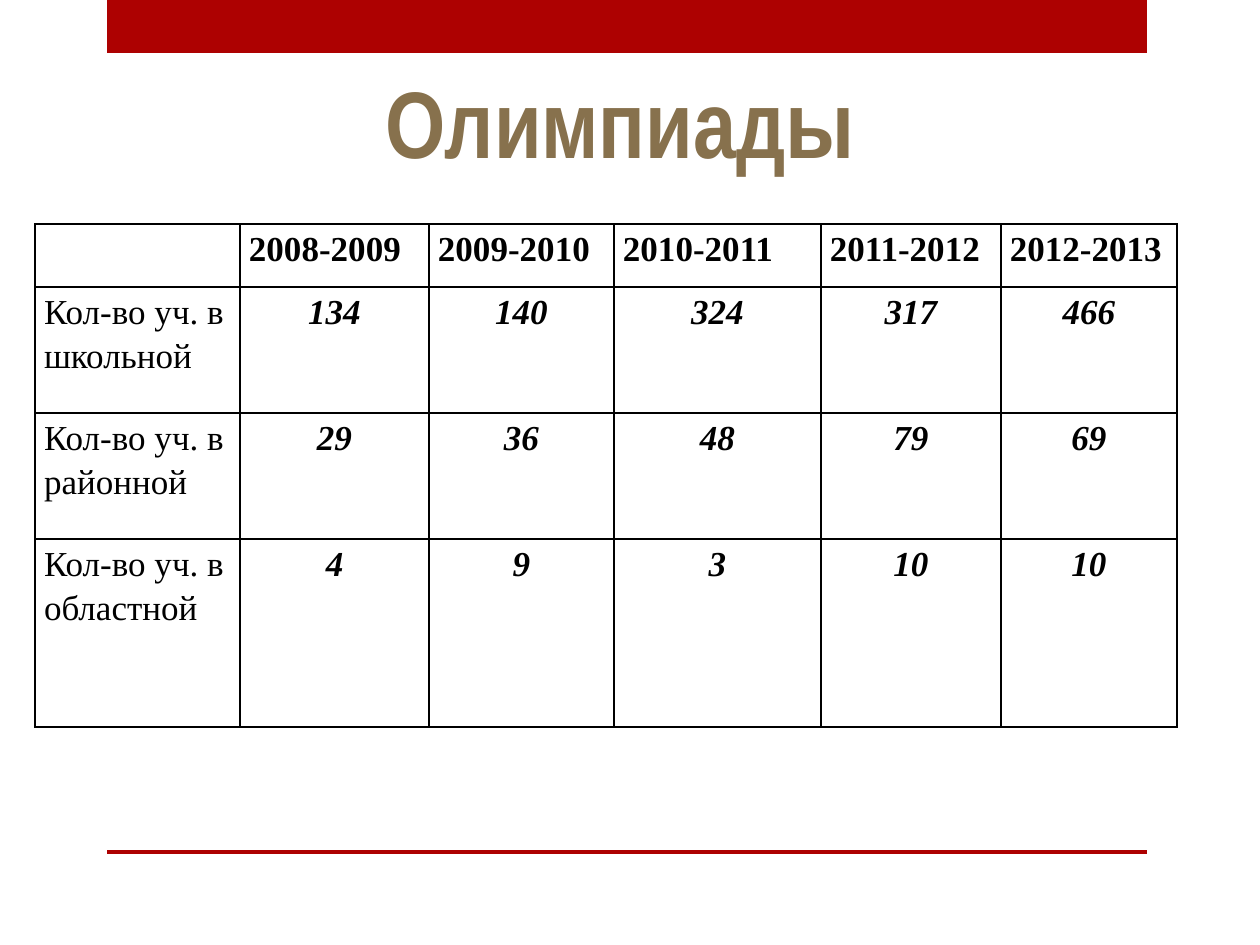
from lxml.etree import SubElement
from pptx import Presentation
from pptx.dml.color import RGBColor
from pptx.enum.shapes import MSO_SHAPE
from pptx.enum.text import MSO_ANCHOR, PP_ALIGN
from pptx.oxml.ns import qn
from pptx.util import Emu, Pt

EMU_PER_INCH = 914400
PX_PER_INCH = 126
RED, BROWN, BLACK = "AD0101", "87714D", "000000"

COLUMNS = [205, 189, 185, 207, 180, 176]
ROWS = [63, 126, 126, 188]
YEARS = ["2008-2009", "2009-2010", "2010-2011", "2011-2012", "2012-2013"]
RESULTS = {
    "Кол-во уч. в школьной": [134, 140, 324, 317, 466],
    "Кол-во уч. в районной": [29, 36, 48, 79, 69],
    "Кол-во уч. в областной": [4, 9, 3, 10, 10],
}


def px(length):
    return Emu(round(length * EMU_PER_INCH / PX_PER_INCH))


def color(value):
    return RGBColor.from_string(value)


def write(frame, text, font="Times New Roman", size=20, fill=BLACK, bold=False,
          italic=False, align=PP_ALIGN.LEFT, spacing=1.0):
    para = frame.paragraphs[0]
    para.alignment = align
    para.line_spacing = spacing
    span = para.add_run()
    span.text = text
    span.font.name = font
    span.font.size = Pt(size)
    span.font.bold = bold
    span.font.italic = italic
    span.font.color.rgb = color(fill)


class Slide:
    def __init__(self, page, accent=RED, title_color=BROWN):
        self.page = page
        self.accent = accent
        self.title_color = title_color

    def bar(self, left, top, width, height):
        shape = self.page.shapes.add_shape(
            MSO_SHAPE.RECTANGLE, px(left), px(top), px(width), px(height))
        shape.shadow.inherit = False
        shape.fill.solid()
        shape.fill.fore_color.rgb = color(self.accent)
        shape.line.fill.background()

    def title(self, text, left, top, width, height):
        box = self.page.shapes.add_textbox(px(left), px(top), px(width), px(height))
        frame = box.text_frame
        frame.word_wrap = True
        frame.vertical_anchor = MSO_ANCHOR.BOTTOM
        write(frame, text, font="Arial Narrow", size=54, fill=self.title_color,
              bold=True, align=PP_ALIGN.CENTER)

    def table(self, left, top, columns, rows):
        table = self.page.shapes.add_table(
            len(rows), len(columns), px(left), px(top),
            px(sum(columns)), px(sum(rows))).table
        table.first_row = table.horz_banding = False
        for column, width in zip(table.columns, columns):
            column.width = px(width)
        for row, height in zip(table.rows, rows):
            row.height = px(height)
        for cell in table.iter_cells():
            self.style_cell(cell)
        return table

    def style_cell(self, cell):
        cell.margin_left = cell.margin_right = px(9)
        cell.margin_top = cell.margin_bottom = 0
        properties = cell._tc.get_or_add_tcPr()
        for side in ("a:lnL", "a:lnR", "a:lnT", "a:lnB"):
            border = SubElement(properties, qn(side), w=str(Pt(1)))
            fill = SubElement(border, qn("a:solidFill"))
            SubElement(fill, qn("a:srgbClr"), val=BLACK)
        cell.fill.background()


def main():
    deck = Presentation()
    deck.slide_width, deck.slide_height = px(1260), px(945)
    slide = Slide(deck.slides.add_slide(deck.slide_layouts[6]))

    slide.bar(107, 0, 1040, 53)
    slide.bar(107, 850, 1040, 4)
    slide.title("Олимпиады", 153, 56, 935, 128)

    table = slide.table(35, 224, COLUMNS, ROWS)
    for column, year in enumerate(YEARS, 1):
        write(table.cell(0, column).text_frame, year, bold=True, spacing=1.15)
    for row, (label, counts) in enumerate(RESULTS.items(), 1):
        write(table.cell(row, 0).text_frame, label, spacing=1.15)
        for column, count in enumerate(counts, 1):
            write(table.cell(row, column).text_frame, str(count), bold=True,
                  italic=True, align=PP_ALIGN.CENTER, spacing=1.15)

    deck.save("out.pptx")


if __name__ == "__main__":
    main()
